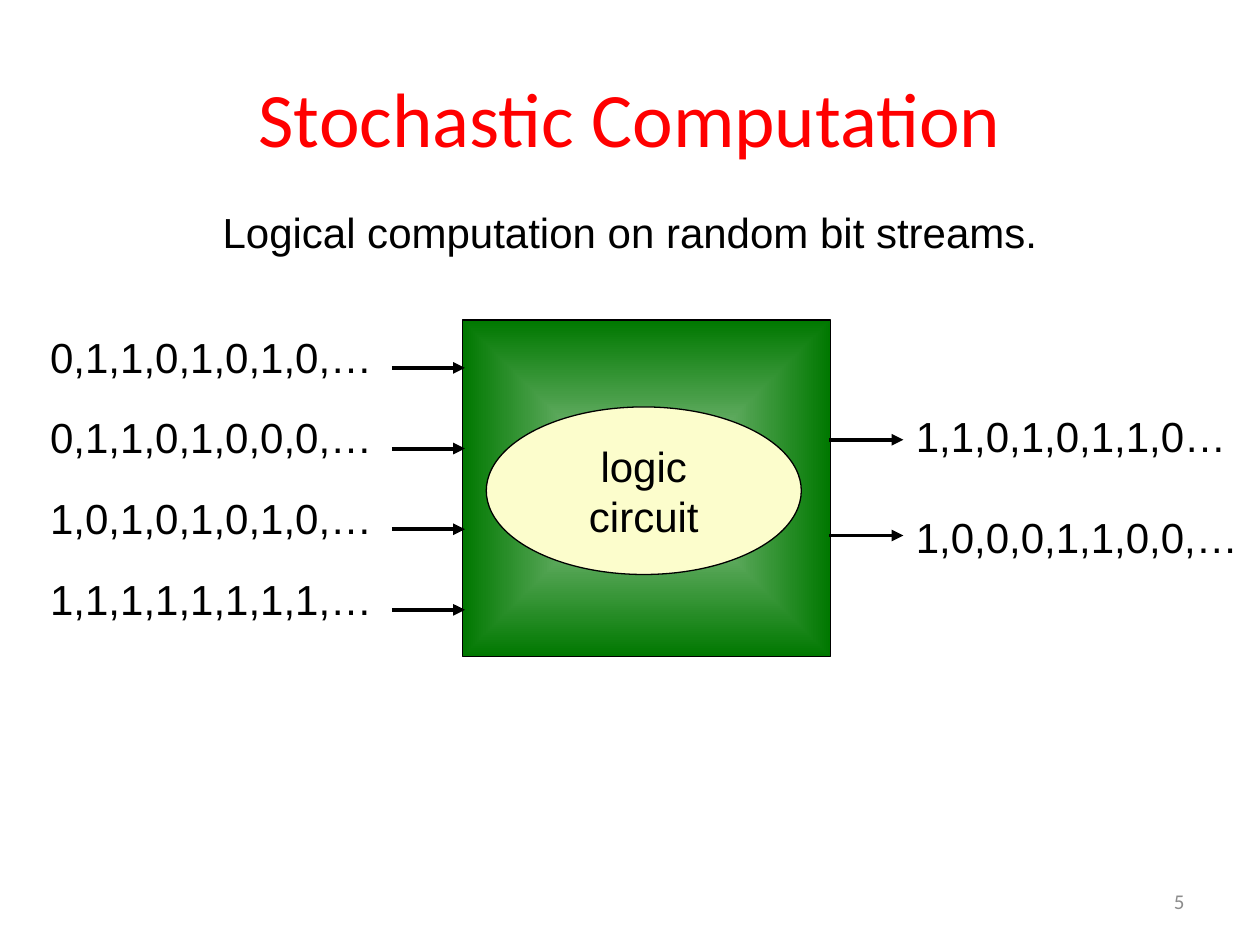
from lxml import etree
from pptx import Presentation
from pptx.dml.color import RGBColor
from pptx.enum.shapes import MSO_CONNECTOR, MSO_SHAPE
from pptx.enum.text import MSO_ANCHOR, MSO_AUTO_SIZE, PP_ALIGN
from pptx.oxml.ns import qn
from pptx.util import Inches, Pt

LEFT, CENTER, RIGHT = PP_ALIGN.LEFT, PP_ALIGN.CENTER, PP_ALIGN.RIGHT
TOP, MIDDLE = MSO_ANCHOR.TOP, MSO_ANCHOR.MIDDLE
GROW = MSO_AUTO_SIZE.SHAPE_TO_FIT_TEXT
STRAIGHT = MSO_CONNECTOR.STRAIGHT
RECTANGLE, OVAL = MSO_SHAPE.RECTANGLE, MSO_SHAPE.OVAL

# Content
TITLE = "Stochastic Computation"
SUBTITLE = "Logical computation on random bit streams."
CIRCUIT_LABEL = "logic\vcircuit"
INPUT_STREAMS = ["0,1,1,0,1,0,1,0,…", "0,1,1,0,1,0,0,0,…",
                 "1,0,1,0,1,0,1,0,…", "1,1,1,1,1,1,1,1,…"]
OUTPUT_STREAMS = [("1,1,0,1,0,1,1,0…", 2.68), ("1,0,0,0,1,1,0,0,…", 2.76)]
PAGE_NUMBER = "5"

THEME = {
    "title": {"name": "Calibri", "size": Pt(44), "color": "FF0000"},
    "body": {"name": "Arial", "size": Pt(24), "color": "000000"},
    "page": {"name": "Calibri", "size": Pt(12), "color": "8C8C8C"},
    "line": "000000",
    "oval": "FCFDCC",
    "box_gradient": ["9FCC9F", "007800"],
    "outline": Pt(0.75),
    "arrow": Pt(2.25),
}

# Layout in inches
INPUT_TOP, INPUT_ARROW_Y, INPUT_PITCH = 2.58, 2.92, 0.64
OUTPUT_TOPS, OUTPUT_ARROW_YS = (3.21, 4.01), (3.49, 4.25)
STREAM_WIDTH, STREAM_HEIGHT = 2.76, 0.5

prs = Presentation()
prs.slide_width, prs.slide_height = Inches(10), Inches(7.5)
slide = prs.slides.add_slide(prs.slide_layouts[6])


def write(frame, text, style, align=LEFT, anchor=TOP, wrap=True):
    frame.word_wrap = wrap
    frame.vertical_anchor = anchor
    paragraph = frame.paragraphs[0]
    paragraph.text = text
    paragraph.alignment = align
    for run in paragraph.runs:
        for attribute, value in THEME[style].items():
            if attribute == "color":
                run.font.color.rgb = RGBColor.from_string(value)
            else:
                setattr(run.font, attribute, value)


def add_text(text, place, style="body", **layout):
    box = slide.shapes.add_textbox(*map(Inches, place))
    write(box.text_frame, text, style, **layout)
    return box


def add_stream(stream, left, top, width=STREAM_WIDTH):
    """Place a bit stream on one line, in a box that grows with its text."""
    box = add_text(stream, (left, top, width, STREAM_HEIGHT), wrap=False)
    box.text_frame.auto_size = GROW


def add_outlined(preset, place):
    shape = slide.shapes.add_shape(preset, *map(Inches, place))
    shape.shadow.inherit = False
    shape.line.color.rgb = RGBColor.from_string(THEME["line"])
    shape.line.width = THEME["outline"]
    return shape


def fill_from_center(shape, colors):
    """Shade the shape from its centre outwards, first colour innermost."""
    shape.fill.gradient()
    for stop, color, position in zip(shape.fill.gradient_stops, colors, (0, 1)):
        stop.color.rgb = RGBColor.from_string(color)
        stop.position = position
    linear = shape.fill._fill._gradFill.find(qn("a:lin"))
    shading = etree.Element(qn("a:path"), {"path": "shape"})
    etree.SubElement(shading, qn("a:fillToRect"),
                     {side: "50000" for side in "ltrb"})
    linear.getparent().replace(linear, shading)


def add_arrow(start_x, end_x, y):
    arrow = slide.shapes.add_connector(
        STRAIGHT, *map(Inches, (start_x, y, end_x, y)))
    arrow.line.color.rgb = RGBColor.from_string(THEME["line"])
    arrow.line.width = THEME["arrow"]
    etree.SubElement(arrow.line._get_or_add_ln(), qn("a:tailEnd"),
                     {"type": "triangle"})
    etree.SubElement(arrow._element.spPr, qn("a:effectLst"))


add_text(TITLE, (0.5, 0.3, 9, 1.25), "title", align=CENTER, anchor=MIDDLE)
add_text(SUBTITLE, (0, 1.59, 10, 0.57), align=CENTER)

circuit_box = add_outlined(RECTANGLE, (3.67, 2.54, 2.92, 2.67))
fill_from_center(circuit_box, THEME["box_gradient"])

circuit = add_outlined(OVAL, (3.86, 3.23, 2.5, 1.33))
circuit.fill.solid()
circuit.fill.fore_color.rgb = RGBColor.from_string(THEME["oval"])
write(circuit.text_frame, CIRCUIT_LABEL, "body", CENTER, MIDDLE, wrap=False)

for row, stream in enumerate(INPUT_STREAMS):
    offset = row * INPUT_PITCH
    add_stream(stream, 0.3, INPUT_TOP + offset)
    add_arrow(3.11, 3.69, INPUT_ARROW_Y + offset)

for (stream, width), top, arrow_y in zip(
        OUTPUT_STREAMS, OUTPUT_TOPS, OUTPUT_ARROW_YS):
    add_stream(stream, 7.17, top, width)
    add_arrow(6.58, 7.17, arrow_y)

add_text(PAGE_NUMBER, (7.17, 6.95, 2.33, 0.4), "page",
         align=RIGHT, anchor=MIDDLE)

prs.save("out.pptx")
